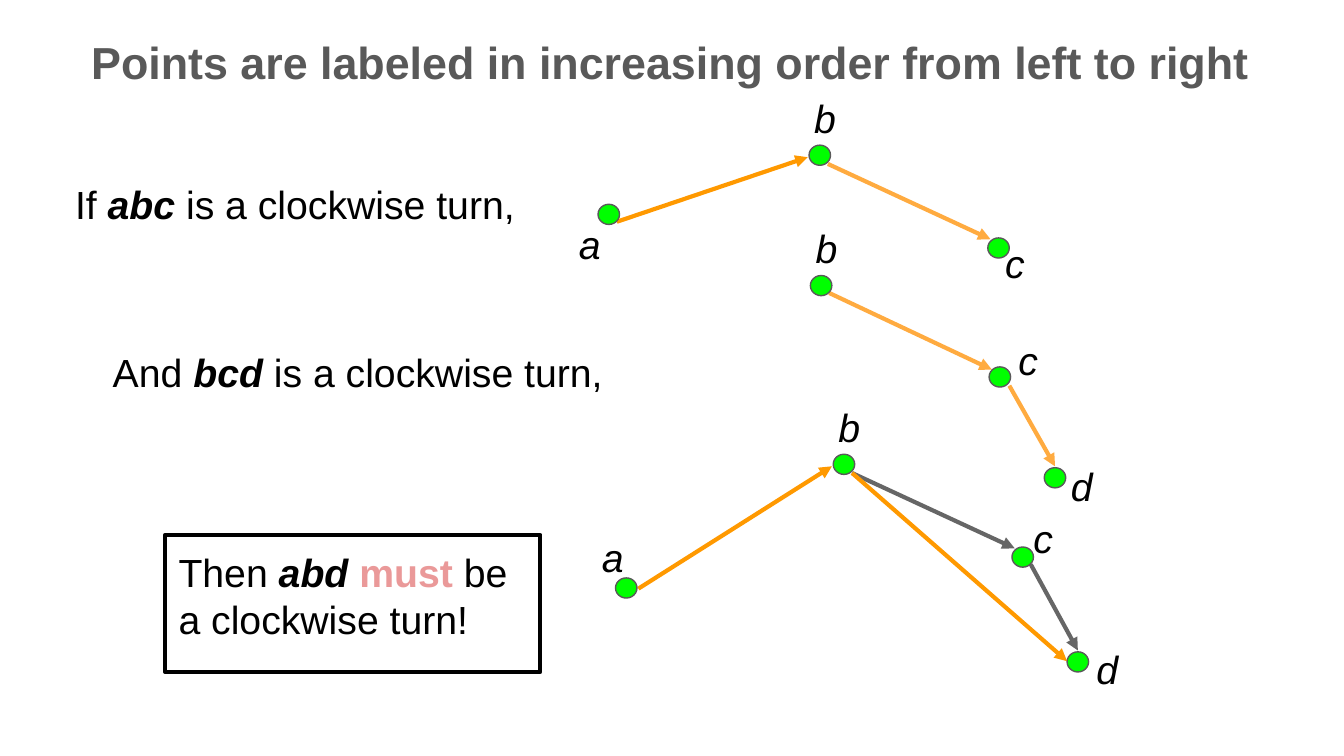
"""Build a slide showing that clockwise turns abc and bcd force a clockwise turn abd."""
from lxml.etree import SubElement
from pptx import Presentation
from pptx.dml.color import RGBColor
from pptx.enum.shapes import MSO_CONNECTOR as Connector, MSO_SHAPE as Shape
from pptx.enum.text import MSO_ANCHOR as Anchor, PP_ALIGN as Align
from pptx.oxml.ns import qn
from pptx.util import Inches, Pt

BLACK = RGBColor(0x00, 0x00, 0x00)
GRAY = RGBColor(0x59, 0x59, 0x59)
ARROW_GRAY = RGBColor(0x66, 0x66, 0x66)
GREEN = RGBColor(0x00, 0xFF, 0x00)
ORANGE = RGBColor(0xFF, 0x99, 0x00)
LIGHT_ORANGE = RGBColor(0xFF, 0xAB, 0x40)
PINK = RGBColor(0xEA, 0x99, 0x99)

PLAIN = {}
BOLD = {"bold": True}
ITALIC = {"italic": True}
BOLD_ITALIC = {"bold": True, "italic": True}

deck = Presentation()
deck.slide_width = Inches(10)
deck.slide_height = deck.slide_width * 9 // 16
page = deck.slides.add_slide(deck.slide_layouts[6])


def write(box, lines, size=21, color=BLACK):
    """Fill a box with lines, each a list of (text, format) pairs."""
    frame = box.text_frame
    frame.word_wrap = True
    frame.vertical_anchor = Anchor.TOP
    frame.margin_left = frame.margin_right = Inches(0.1)
    frame.margin_top = frame.margin_bottom = Inches(0.1)
    for index, line in enumerate(lines):
        para = frame.paragraphs[0] if index == 0 else frame.add_paragraph()
        para.alignment = Align.LEFT
        for text, style in line:
            span = para.add_run()
            span.text = text
            span.font.name = "Arial"
            span.font.size = Pt(size)
            span.font.bold = style.get("bold", False)
            span.font.italic = style.get("italic", False)
            span.font.color.rgb = style.get("color", color)


def add_text(left, top, width, height, line, **style):
    """Add a one-line text box."""
    box = page.shapes.add_textbox(Inches(left), Inches(top), Inches(width), Inches(height))
    write(box, [line], **style)


add_text(0.58, 0.16, 9.05, 0.66,
         [("Points are labeled in increasing order from left to right", BOLD)],
         size=24, color=GRAY)
for left, top, width, opening, turn in [
    (0.46, 1.24, 3.79, "If ", "abc "),
    (0.74, 2.49, 4.31, "And ", "bcd "),
]:
    add_text(left, top, width, 0.45,
             [(opening, PLAIN), (turn, BOLD_ITALIC), ("is a clockwise turn,", PLAIN)])

conclusion = page.shapes.add_shape(
    Shape.RECTANGLE, Inches(1.23), Inches(3.98), Inches(2.79), Inches(1.02))
conclusion.shadow.inherit = False
conclusion.fill.background()
conclusion.line.color.rgb = BLACK
conclusion.line.width = Pt(2.25)
write(conclusion, [
    [("Then ", PLAIN), ("abd ", BOLD_ITALIC), ("must", {"bold": True, "color": PINK}),
     (" be", PLAIN)],
    [("a clockwise turn!", PLAIN)],
])

arrows = [
    (4.59, 1.65, 6.01, 1.17, ORANGE),
    (6.16, 1.22, 7.37, 1.78, LIGHT_ORANGE),
    (6.17, 2.18, 7.38, 2.75, LIGHT_ORANGE),
    (7.51, 2.87, 7.85, 3.47, LIGHT_ORANGE),
    (6.34, 3.52, 7.55, 4.08, ARROW_GRAY),
    (4.75, 4.38, 6.19, 3.47, ORANGE),
    (7.67, 4.20, 8.02, 4.84, ARROW_GRAY),
    (6.34, 3.52, 7.94, 4.92, ORANGE),
]
for start_x, start_y, end_x, end_y, color in arrows:
    arrow = page.shapes.add_connector(
        Connector.STRAIGHT, Inches(start_x), Inches(start_y), Inches(end_x), Inches(end_y))
    arrow.line.color.rgb = color
    arrow.line.width = Pt(2.25)
    SubElement(arrow.line._get_or_add_ln(), qn("a:tailEnd"), type="triangle")
    SubElement(arrow._element.spPr, qn("a:effectLst"))

points = [
    ("a", 4.45, 1.52, 4.21, 1.54),
    ("b", 6.02, 1.08, 5.96, 0.60),
    ("c", 7.35, 1.77, 7.38, 1.68),
    ("b", 6.03, 2.05, 5.97, 1.57),
    ("c", 7.36, 2.73, 7.48, 2.40),
    ("d", 7.77, 3.48, 7.87, 3.34),
    ("a", 4.58, 4.30, 4.38, 3.87),
    ("b", 6.20, 3.38, 6.14, 2.90),
    ("c", 7.53, 4.07, 7.59, 3.73),
    ("d", 7.94, 4.85, 8.06, 4.70),
]
for name, dot_left, dot_top, label_left, label_top in points:
    dot = page.shapes.add_shape(
        Shape.OVAL, Inches(dot_left), Inches(dot_top), Inches(0.16), Inches(0.15))
    dot.shadow.inherit = False
    dot.fill.solid()
    dot.fill.fore_color.rgb = GREEN
    dot.line.color.rgb = GRAY
    dot.line.width = Pt(0.75)
    add_text(label_left, label_top, 0.46, 0.25, [(name, ITALIC)])

deck.save("out.pptx")
